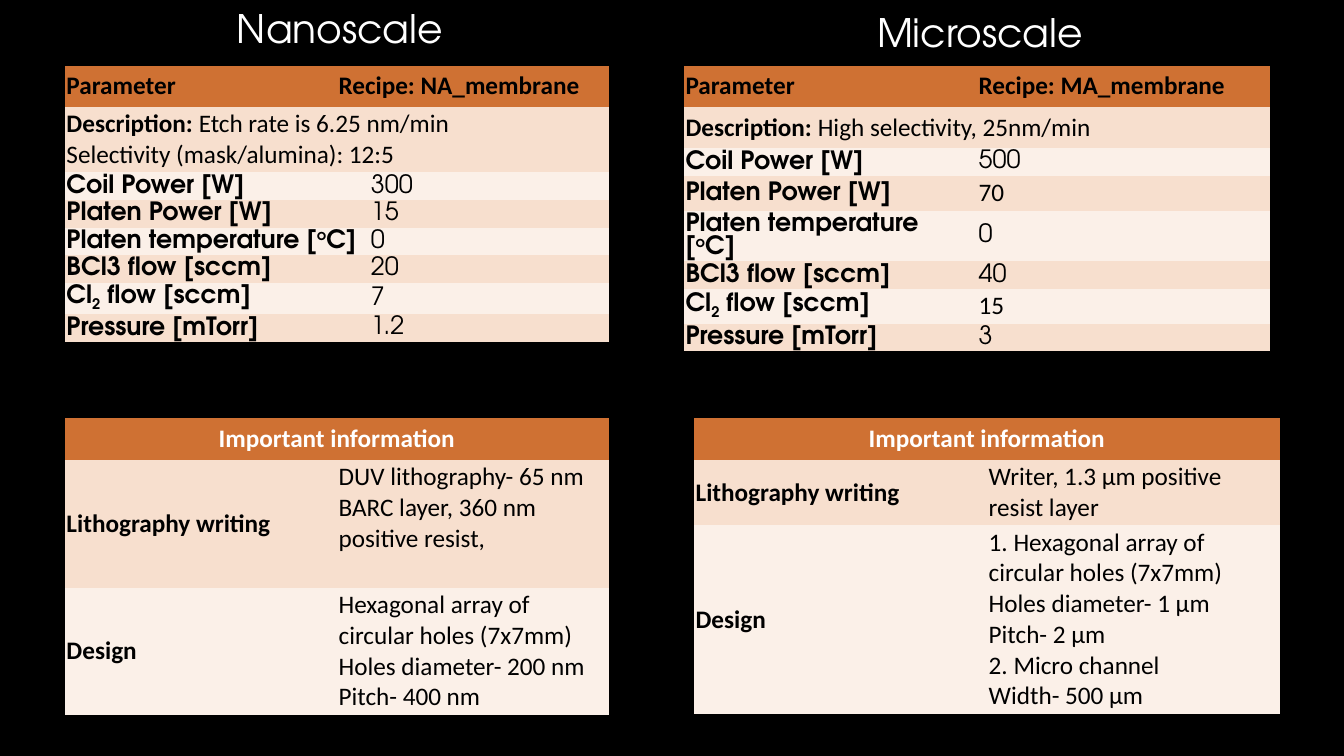
from pptx import Presentation
from pptx.util import Inches, Pt
from pptx.dml.color import RGBColor as Rgb
from pptx.enum.text import MSO_ANCHOR as Anchor, PP_ALIGN as Align

HUES = {"back": "000000", "dark": "000000", "light": "FFFFFF",
        "head": "CF7133", "odd": "F7DFCE", "even": "FBF0E8"}
BODY, WIDE = "Calibri", "TeX Gyre Adventor"
PLAIN = "{2D5ABB26-0587-4C30-8999-92F81FD0307C}"
HEAD, LINE, TALL = 5.47, 3.33, 16.93
LABELS = [["Coil Power [W]"], ["Platen Power [W]"],
          ["Platen temperature [", ("o", 30), "C]"],
          ["BCl3 flow [sccm]"], ["Cl", ("2", -25), " flow [sccm]"],
          ["Pressure [mTorr]"]]


class Deck:
    def __init__(self):
        self.prs = Presentation()
        self.prs.slide_width, self.prs.slide_height = Inches(13.33), Inches(7.5)
        self.page = self.prs.slides.add_slide(self.prs.slide_layouts[6])
        fill = self.page.background.fill
        fill.solid()
        fill.fore_color.rgb = self.hue("back")

    def hue(self, name):
        return Rgb.from_string(HUES[name])

    def x(self, share):
        return int(self.prs.slide_width * share / 100)

    def y(self, share):
        return int(self.prs.slide_height * share / 100)

    def style(self, run, size, face, hue, bold=False):
        font = run.font
        font.size, font.name, font.bold = Pt(size), face, bold
        font.color.rgb = self.hue(hue)

    def title(self, left, top, text):
        box = self.page.shapes.add_textbox(
            self.x(left), self.y(top), self.x(17.85), self.y(7.6))
        frame = box.text_frame
        frame.word_wrap = True
        frame.text = text
        self.style(frame.paragraphs[0].runs[0], 28, WIDE, "light")

    def cell(self, cell, paras, fill, face=BODY, bold=False, hue="dark"):
        cell.fill.solid()
        cell.fill.fore_color.rgb = self.hue(fill)
        cell.vertical_anchor = Anchor.MIDDLE
        cell.margin_left = cell.margin_right = Inches(0.02)
        cell.margin_top = cell.margin_bottom = Inches(0.02)
        frame = cell.text_frame
        for i, parts in enumerate(paras):
            para = frame.add_paragraph() if i else frame.paragraphs[0]
            for part in parts:
                text, shift = part if isinstance(part, tuple) else (part, 0)
                run = para.add_run()
                run.text = text
                self.style(run, 18, face, hue, bold)
                if shift:
                    run.font._element.set("baseline", str(shift * 1000))

    def grid(self, left, top, cols, rows):
        frame = self.page.shapes.add_table(
            len(rows), len(cols), self.x(left), self.y(top),
            self.x(sum(cols)), self.y(sum(rows)))
        table = frame.table
        table.first_row = table.horz_banding = False
        table._tbl.tblPr.find("{*}tableStyleId").text = PLAIN
        for col, wide in zip(table.columns, cols):
            col.width = self.x(wide)
        for row, high in zip(table.rows, rows):
            row.height = self.y(high)
        return table

    def recipe(self, left, cols, name, about, vals, faces):
        table = self.grid(left, 8.67, cols, [HEAD] * 2 + [LINE] * len(vals))
        last = len(cols) - 1
        table.cell(1, 0).merge(table.cell(1, last))
        if last > 1:
            table.cell(0, 1).merge(table.cell(0, last))
            for r in range(2, len(vals) + 2):
                table.cell(r, 0).merge(table.cell(r, last - 1))
        self.cell(table.cell(0, 0), [["Parameter"]], "head", bold=True)
        self.cell(table.cell(0, 1), [["Recipe: " + name]], "head", bold=True)
        note = table.cell(1, 0)
        self.cell(note, [["Description: ", about[0]]] + [[t] for t in about[1:]],
                  "odd")
        note.text_frame.paragraphs[0].runs[0].font.bold = True
        for r, (label, val, face) in enumerate(zip(LABELS, vals, faces), 2):
            fill = "odd" if r % 2 else "even"
            self.cell(table.cell(r, 0), [label], fill, WIDE, True)
            self.cell(table.cell(r, last), [[val]], fill, face)

    def facts(self, left, wide, write, plan, high):
        table = self.grid(left, 55.33, [wide] * 2, [HEAD, high, LINE])
        top = table.cell(0, 0)
        top.merge(table.cell(0, 1))
        self.cell(top, [["Important information"]], "head", bold=True, hue="light")
        top.text_frame.paragraphs[0].alignment = Align.CENTER
        pairs = [("Lithography writing", [write], "odd"), ("Design", plan, "even")]
        for r, (label, lines, fill) in enumerate(pairs, 1):
            self.cell(table.cell(r, 0), [[label]], fill, bold=True)
            self.cell(table.cell(r, 1), [[t] for t in lines], fill)
        table.cell(1, 1).vertical_anchor = Anchor.TOP


def main():
    deck = Deck()
    deck.recipe(4.8, [20.25, 2.4, 17.85], "NA_membrane",
                ["Etch rate is 6.25 nm/min", "Selectivity (mask/alumina): 12:5"],
                ["300", "15", "0", "20", "7", "1.2"], [WIDE] * 6)
    deck.facts(4.8, 20.25,
               "DUV lithography- 65 nm BARC layer, 360 nm positive resist,",
               ["Hexagonal array of circular holes (7x7mm)",
                "Holes diameter- 200 nm", "Pitch- 400 nm"], TALL)
    deck.recipe(50.86, [21.81] * 2, "MA_membrane",
                ["High selectivity, 25nm/min"],
                ["500", "70", "0", "40", "15", "3"],
                [WIDE, BODY, WIDE, WIDE, BODY, WIDE])
    deck.facts(51.61, 21.81, "Writer, 1.3 µm positive resist layer",
               ["1. Hexagonal array of circular holes (7x7mm)",
                "Holes diameter- 1 µm", "Pitch- 2 µm",
                "2. Micro channel", "Width- 500 µm"], LINE)
    deck.title(16.88, -0.13, "Nanoscale")
    deck.title(64.52, 0.4, "Microscale")
    deck.prs.save("out.pptx")


if __name__ == "__main__":
    main()
